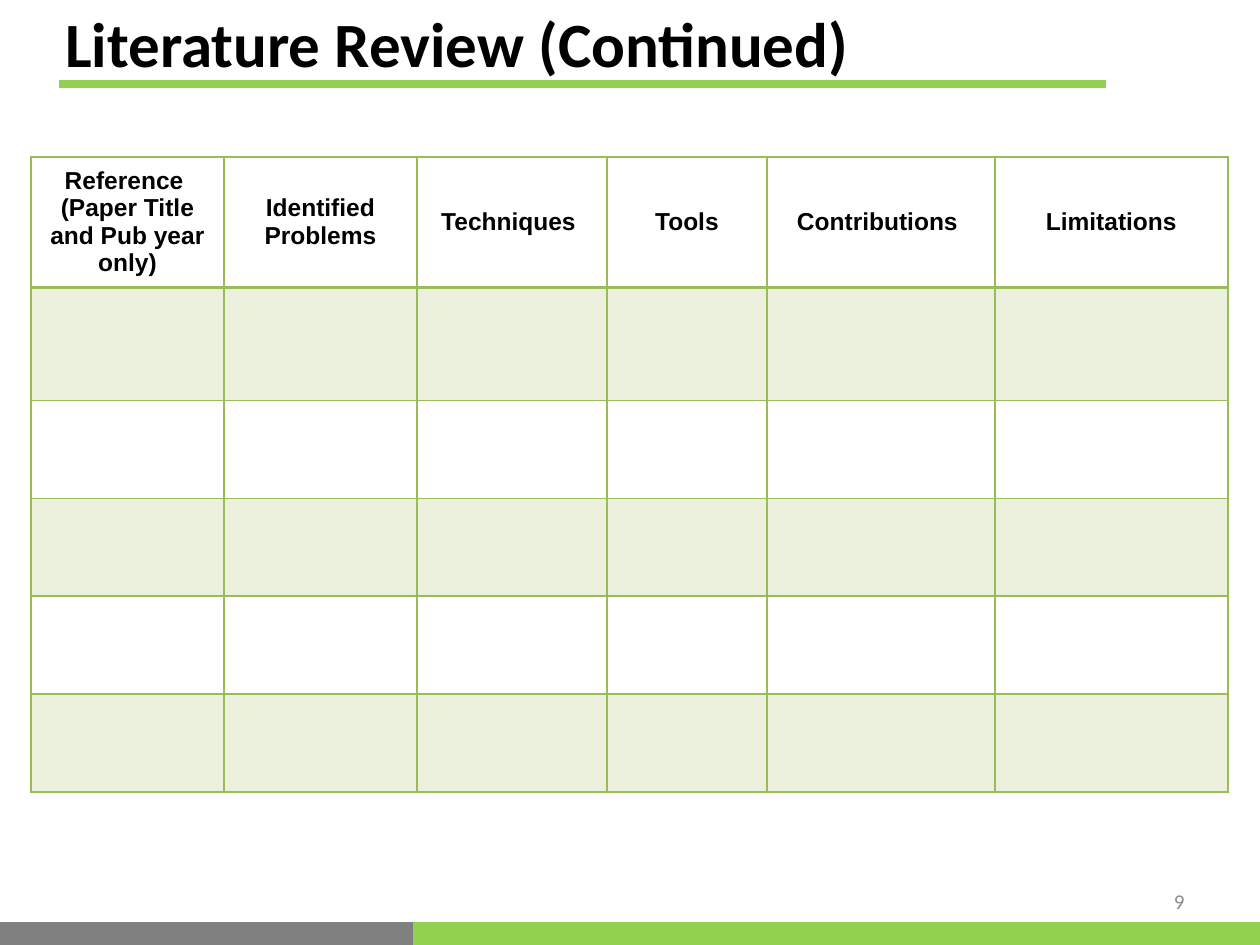
import dataclasses

import lxml.etree
import pptx
import pptx.dml.color
import pptx.enum.shapes
import pptx.enum.text
import pptx.oxml
import pptx.oxml.ns
import pptx.util

EMU_PER_PX = 914400 / 126
GREEN, LIME, GRAY = "9BBB59", "92D050", "808080"
HEADERS = (
    "Reference \n(Paper Title and Pub year only)",
    "Identified Problems",
    "Techniques ",
    "Tools",
    "Contributions ",
    "Limitations",
)
COLUMN_WIDTHS = (193, 193, 190, 160, 228, 233)
ROW_HEIGHTS = (123, 113, 98, 98, 98, 98)
ALIGN = pptx.enum.text.PP_ALIGN
MIDDLE = pptx.enum.text.MSO_ANCHOR.MIDDLE


@dataclasses.dataclass(frozen=True)
class Rule:
    """A horizontal bar drawn as a thick line."""

    left: int
    right: int
    y: int
    color: str
    weight: float


@dataclasses.dataclass(frozen=True)
class Label:
    """A text box holding one line."""

    text: str
    frame: tuple[int, int, int, int]
    align: ALIGN
    color: str
    format: dict


RULES = (
    Rule(10, 1250, 935, LIME, 14.5),
    Rule(63, 1102, 84, LIME, 4.5),
    Rule(10, 400, 935, GRAY, 14.5),
)
LABELS = (
    Label("9", (903, 876, 294, 50), ALIGN.RIGHT, "8C8C8C",
          {"name": "Calibri", "size": pptx.util.Pt(12), "bold": False}),
    Label("Literature Review (Continued)", (53, 0, 1124, 84), ALIGN.LEFT, "000000",
          {"name": "Calibri", "size": pptx.util.Pt(36), "bold": True}),
)
HEADER_FORMAT = {"name": "Arial", "size": pptx.util.Pt(14), "bold": True}


def px(length: int) -> int:
    """Turn pixels into EMU."""
    return round(length * EMU_PER_PX)


def rgb(color: str) -> pptx.dml.color.RGBColor:
    """Turn a hex string into a colour."""
    return pptx.dml.color.RGBColor.from_string(color)


def write_text(frame, text: str, align: ALIGN, color: str, values: dict) -> None:
    """Write lines of text as formatted paragraphs."""
    frame.text = text
    for para in frame.paragraphs:
        para.alignment = align
        for span in para.runs:
            span.font.color.rgb = rgb(color)
            for name, value in values.items():
                setattr(span.font, name, value)


def draw_rule(page, rule: Rule) -> None:
    """Draw a square-ended horizontal bar."""
    line = page.shapes.add_connector(
        pptx.enum.shapes.MSO_CONNECTOR.STRAIGHT,
        px(rule.left), px(rule.y), px(rule.right), px(rule.y))
    line.line.color.rgb = rgb(rule.color)
    line.line.width = pptx.util.Pt(rule.weight)
    properties = line._element.spPr
    properties.find(pptx.oxml.ns.qn("a:ln")).set("cap", "sq")
    lxml.etree.SubElement(properties, pptx.oxml.ns.qn("a:effectLst"))


def draw_label(page, label: Label) -> None:
    """Draw a vertically centred text box."""
    box = page.shapes.add_textbox(*map(px, label.frame))
    box.text_frame.word_wrap = True
    box.text_frame.vertical_anchor = MIDDLE
    write_text(box.text_frame, label.text, label.align, label.color, label.format)


def set_borders(cell, weights: dict[str, int]) -> None:
    """Give each side of a cell a green line of its weight in points."""
    properties = cell._tc.get_or_add_tcPr()
    for position, (side, weight) in enumerate(weights.items()):
        border = pptx.oxml.parse_xml(
            f'<a:ln{side} {pptx.oxml.ns.nsdecls("a")} w="{pptx.util.Pt(weight)}">'
            f'<a:solidFill><a:srgbClr val="{GREEN}"/></a:solidFill></a:ln{side}>')
        properties.insert(position, border)


def set_tint(cell, shaded: bool) -> None:
    """Fill a cell with translucent green, or leave it clear."""
    if not shaded:
        cell.fill.background()
        return
    cell.fill.solid()
    cell.fill.fore_color.rgb = rgb(GREEN)
    color = cell._tc.tcPr.find(".//" + pptx.oxml.ns.qn("a:srgbClr"))
    lxml.etree.SubElement(color, pptx.oxml.ns.qn("a:alpha"), val="20000")


def draw_review_table(page) -> None:
    """Draw the literature table with its header and empty banded rows."""
    table = page.shapes.add_table(
        len(ROW_HEIGHTS), len(COLUMN_WIDTHS), px(31), px(157),
        px(sum(COLUMN_WIDTHS)), px(sum(ROW_HEIGHTS))).table
    table.first_row = table.horz_banding = False
    for column, width in zip(table.columns, COLUMN_WIDTHS):
        column.width = px(width)
    for index, (row, height) in enumerate(zip(table.rows, ROW_HEIGHTS)):
        row.height = px(height)
        weights = {"L": 1, "R": 1, "T": 2 if index == 1 else 1, "B": 2 if index == 0 else 1}
        for cell in row.cells:
            set_tint(cell, index % 2 == 1)
            set_borders(cell, weights)
    for cell, header in zip(table.rows[0].cells, HEADERS):
        cell.vertical_anchor = MIDDLE
        write_text(cell.text_frame, header, ALIGN.CENTER, "000000", HEADER_FORMAT)


def main() -> None:
    """Build and save the slide."""
    deck = pptx.Presentation()
    deck.slide_width, deck.slide_height = px(1260), px(945)
    page = deck.slides.add_slide(deck.slide_layouts[6])
    for rule in RULES:
        draw_rule(page, rule)
    for label in LABELS:
        draw_label(page, label)
    draw_review_table(page)
    deck.save("out.pptx")


if __name__ == "__main__":
    main()
